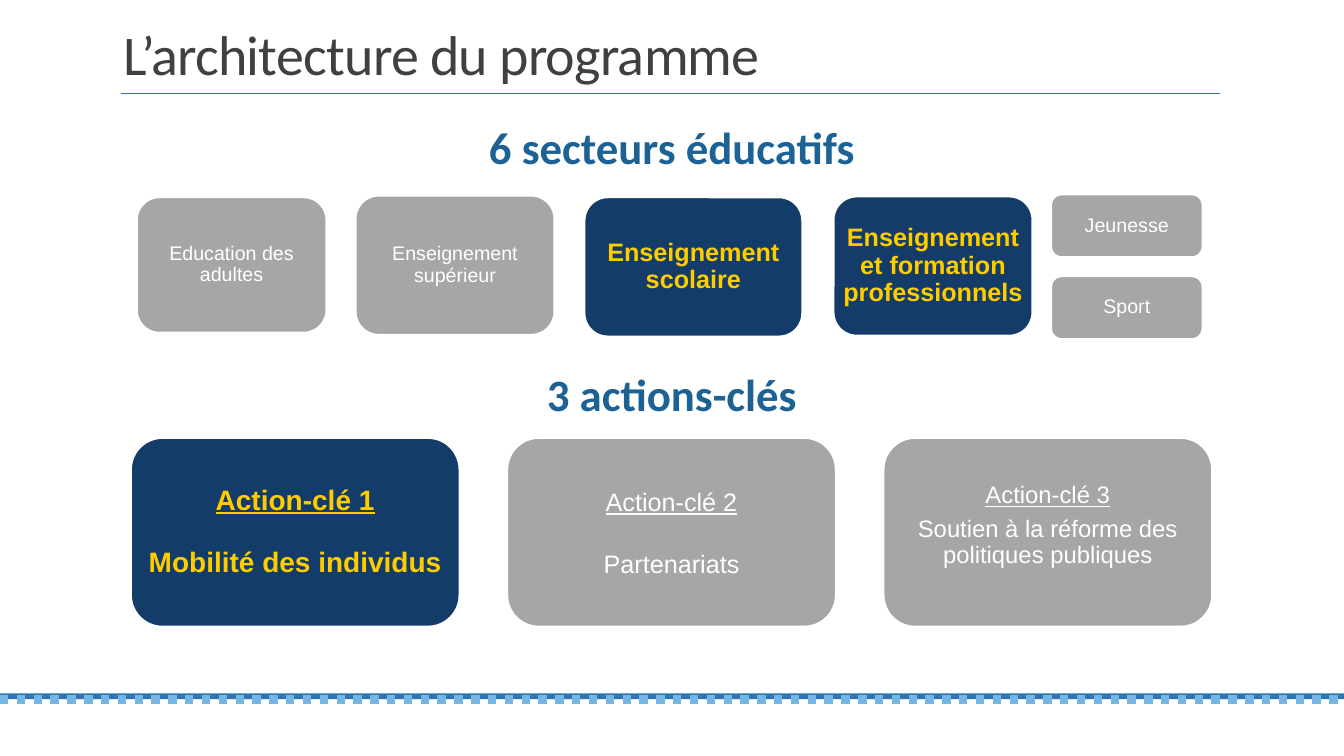
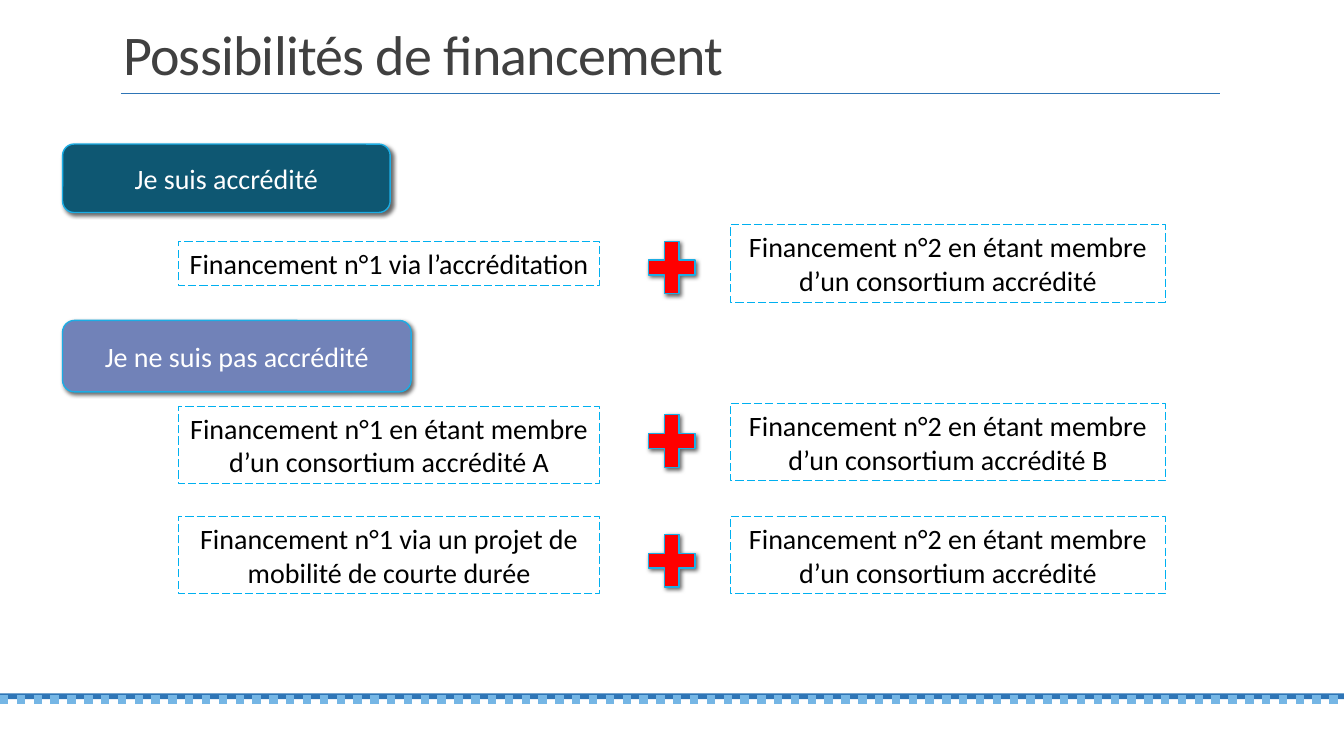
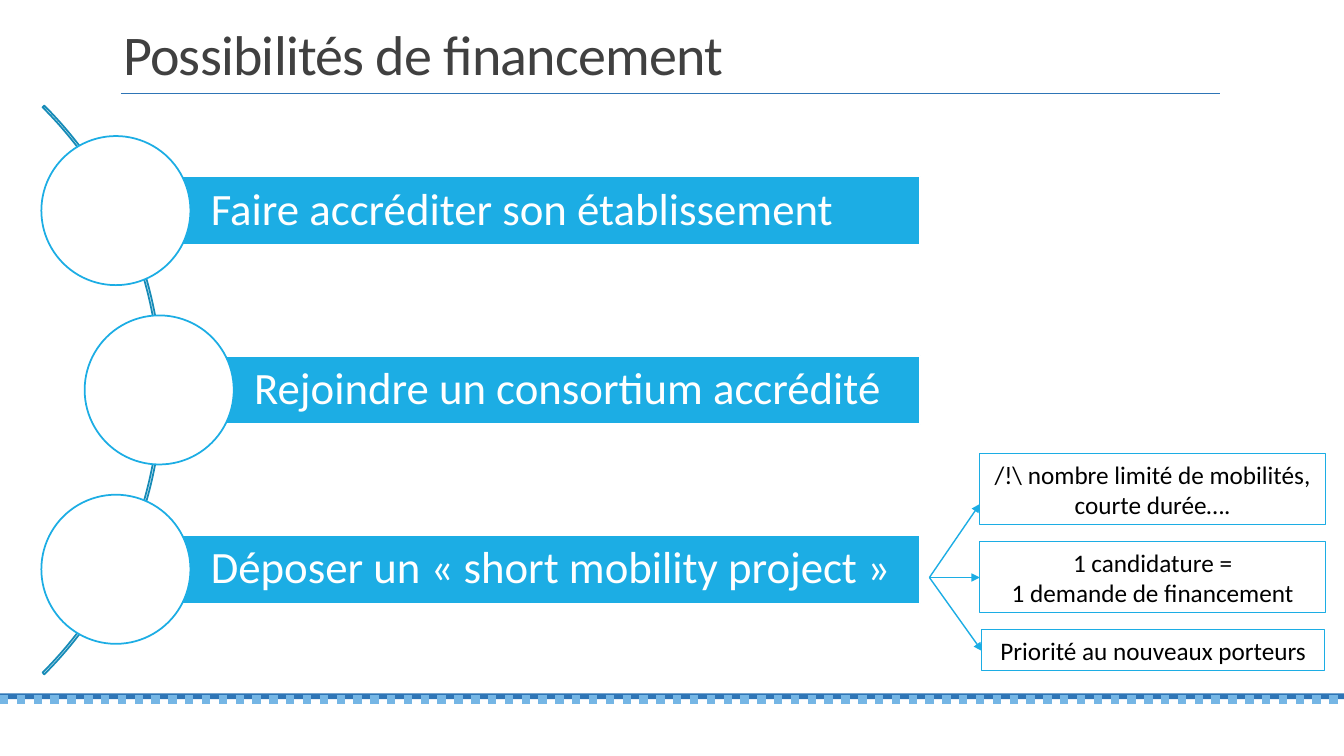
from lxml import etree
from pptx import Presentation
from pptx.dml.color import RGBColor
from pptx.enum.dml import MSO_LINE
from pptx.enum.shapes import MSO_CONNECTOR, MSO_SHAPE
from pptx.enum.text import MSO_ANCHOR, PP_ALIGN
from pptx.oxml.ns import qn
from pptx.util import Inches, Pt

RECTANGLE = MSO_SHAPE.RECTANGLE
ROUNDED = MSO_SHAPE.ROUNDED_RECTANGLE
PLUS = MSO_SHAPE.MATH_PLUS
OVAL = MSO_SHAPE.OVAL
ARC = MSO_SHAPE.BLOCK_ARC
STRAIGHT = MSO_CONNECTOR.STRAIGHT
LONG_DASH, DOTS = MSO_LINE.LONG_DASH, MSO_LINE.ROUND_DOT
LEFT, CENTER = PP_ALIGN.LEFT, PP_ALIGN.CENTER
TOP, MIDDLE, BOTTOM = MSO_ANCHOR.TOP, MSO_ANCHOR.MIDDLE, MSO_ANCHOR.BOTTOM

COLORS = {
    "white": "FFFFFF", "black": "000000", "title": "404040", "heading": "1D6294",
    "band": "2E75B6", "dots": "75B6E5", "navy": "143C68", "gray": "A6A6A6",
    "yellow": "FFCC00", "red": "FF0000", "teal": "0E5772", "lavender": "7182B8",
    "sky": "1CADE4", "dash": "00B0F0", "arc": "168BB7",
}
COLUMNS, ROWS = 32, 18
CELL = 5 / 12  # inches
MARGINS = (0.24, 0.12, 0.24, 0.12)
TIGHT = (0.05, 0.05, 0.05, 0.05)


def cells(count):
    return Inches(count * CELL)


def rgb(name):
    return RGBColor.from_string(COLORS[name])


class Deck:
    """Holds the shared style and the current slide; lengths are grid cells."""

    def __init__(self):
        self.presentation = Presentation()
        self.presentation.slide_width = cells(COLUMNS)
        self.presentation.slide_height = cells(ROWS)
        self.layout = self.presentation.slide_layouts[5]
        self.slide = None

    def new_slide(self, title):
        self.slide = self.presentation.slides.add_slide(self.layout)
        if len(self.presentation.slides) == 1:
            self.decorate_layout()
        placeholder = self.slide.shapes.title
        placeholder.left, placeholder.top = cells(2.69), 0
        placeholder.width, placeholder.height = cells(28.42), cells(2.18)
        self.set_text(placeholder, title, size=40, color="title", align=LEFT,
                      anchor=BOTTOM, spacing=0.85)
        for run in placeholder.text_frame.paragraphs[0].runs:
            run.font._element.set("spc", "-50")

    def decorate_layout(self):
        """Draw the title rule and the bottom band, then move them to the layout."""
        decorations = [
            self.line((2.88, 2.23), (29.04, 2.23), "band"),
            self.shape(RECTANGLE, (0, 16.51, COLUMNS, 0.14), fill="band"),
            self.line((0, 16.66), (COLUMNS, 16.66), "dots", width=6, dash=DOTS),
        ]
        for decoration in decorations:
            self.layout.shapes.element.append(decoration.element)

    def set_text(self, shape, text, size, color, font="Calibri", align=CENTER,
                 anchor=MIDDLE, spacing=1, gap=0, margins=MARGINS, bold=False,
                 underline_first=False):
        """Fill a shape with one paragraph per line, with gap points between."""
        frame = shape.text_frame
        left, top, right, bottom = map(cells, margins)
        settings = {"word_wrap": True, "vertical_anchor": anchor, "margin_left": left,
                    "margin_top": top, "margin_right": right, "margin_bottom": bottom}
        for name, value in settings.items():
            setattr(frame, name, value)
        for index, words in enumerate(text.split("\n")):
            paragraph = frame.add_paragraph() if index else frame.paragraphs[0]
            paragraph.alignment = align
            paragraph.line_spacing = spacing
            paragraph.space_before = Pt(gap if index else 0)
            run = paragraph.add_run()
            run.text = words
            run.font.color.rgb = rgb(color)
            formats = {"name": font, "size": Pt(size), "bold": bold,
                       "underline": underline_first and index == 0}
            for name, value in formats.items():
                setattr(run.font, name, value)

    def shape(self, kind, box, fill=None, line=None, width=1.25, dash=None,
              shadow=False, text=None, **text_format):
        shape = self.slide.shapes.add_shape(kind, *map(cells, box))
        shape.shadow.inherit = False
        if fill:
            shape.fill.solid()
            shape.fill.fore_color.rgb = rgb(fill)
        else:
            shape.fill.background()
        if line:
            shape.line.color.rgb = rgb(line)
            shape.line.width = Pt(width)
            if dash:
                shape.line.dash_style = dash
        else:
            shape.line.fill.background()
        if shadow:
            self.cast_shadow(shape)
        if text:
            self.set_text(shape, text, **text_format)
        return shape

    def cast_shadow(self, shape):
        effects = shape.element.spPr.find(qn("a:effectLst"))
        outer = etree.SubElement(effects, qn("a:outerShdw"), blurRad=str(Pt(3)),
                                 dist=str(Pt(2)), dir=str(45 * 60000))
        color = etree.SubElement(outer, qn("a:srgbClr"), val=COLORS["black"])
        etree.SubElement(color, qn("a:alpha"), val="60000")

    def line(self, start, end, color, width=1, dash=None, arrow=False):
        connector = self.slide.shapes.add_connector(STRAIGHT, *map(cells, start + end))
        connector.line.color.rgb = rgb(color)
        connector.line.width = Pt(width)
        if dash:
            connector.line.dash_style = dash
        properties = connector.element.spPr
        if arrow:
            etree.SubElement(properties.find(qn("a:ln")), qn("a:tailEnd"), type="triangle")
        etree.SubElement(properties, qn("a:effectLst"))
        return connector

    def heading(self, text, top):
        box = self.slide.shapes.add_textbox(*map(cells, (0, top, COLUMNS, 1.08)))
        self.set_text(box, text, size=32, color="heading", bold=True, spacing=0.9,
                      anchor=TOP)

    def card(self, box, text, size, highlighted, **text_format):
        """Rounded card: navy with bold yellow text if highlighted, else gray."""
        fill, color = ("navy", "yellow") if highlighted else ("gray", "white")
        text_format = {"margins": TIGHT, "spacing": 0.9, **text_format}
        self.shape(ROUNDED, box, fill, "white", text=text, size=size, color=color,
                   font="Arial", bold=highlighted, **text_format)

    def status(self, box, text, fill):
        self.shape(ROUNDED, box, fill, "sky", width=1, shadow=True,
                   text=text, size=20, color="white")

    def note(self, box, text, line, size, dash=None):
        self.shape(RECTANGLE, box, line=line, width=0.75, dash=dash,
                   text=text, size=size, color="black")

    def step(self, left, top, text):
        """Bar ending at a shared right edge, with a circle centred on its left edge."""
        right, height, diameter = 21.91, 1.63, 3.55
        self.shape(RECTANGLE, (left, top, right - left, height), "sky", "white",
                   text=text, size=32, color="white", align=LEFT, spacing=0.9,
                   margins=(2.26, 0.22, 0.22, 0.22))
        self.shape(OVAL, (left - diameter / 2, top + (height - diameter) / 2,
                          diameter, diameter), "white", "sky")


def architecture(deck):
    deck.new_slide("L’architecture du programme")
    deck.heading("6 secteurs éducatifs", 2.88)
    sectors = [
        ((3.26, 4.7, 4.51, 3.22), "Education des adultes", False),
        ((8.47, 4.66, 4.73, 3.31), "Enseignement supérieur", False),
        ((13.92, 4.7, 5.18, 3.31), "Enseignement scolaire", True),
        ((19.85, 4.68, 4.73, 3.31), "Enseignement et formation professionnels", True),
        ((25.03, 4.63, 3.6, 1.49), "Jeunesse", False),
        ((25.03, 6.58, 3.6, 1.49), "Sport", False),
    ]
    for box, text, highlighted in sectors:
        deck.card(box, text, 18 if highlighted else 14, highlighted)

    deck.heading("3 actions-clés", 8.76)
    actions = [
        ("Action-clé 1\nMobilité des individus", 20, {"gap": 23}),
        ("Action-clé 2\nPartenariats", 18, {"gap": 23, "spacing": 1}),
        ("Action-clé 3\nSoutien à la réforme des politiques publiques", 17,
         {"gap": 6, "margins": (0.05, 0.05, 0.05, 0.35)}),
    ]
    for index, (text, size, text_format) in enumerate(actions):
        deck.card((3.12 + 8.96 * index, 10.43, 7.82, 4.49), text, size,
                  highlighted=index == 0, underline_first=True, **text_format)


def funding_combinations(deck):
    deck.new_slide("Possibilités de financement")
    deck.status((1.49, 3.43, 7.8, 1.63), "Je suis accrédité", "teal")
    deck.status((1.49, 7.63, 8.3, 1.7), "Je ne suis pas accrédité", "lavender")
    member = "en étant membre d’un consortium accrédité"
    combinations = [
        (5.74, 1.06, "via l’accréditation", 5.52, 5.35, member),
        (9.67, 1.85, f"{member} A", 9.65, 9.6, f"{member} B"),
        (12.29, 1.85, "via un projet de mobilité de courte durée", 12.5, 12.29, member),
    ]
    for first_top, first_height, first, plus_top, second_top, second in combinations:
        deck.note((4.25, first_top, 10.03, first_height), f"Financement n°1 {first}",
                  "dash", 20, LONG_DASH)
        deck.shape(PLUS, (15.24, plus_top, 1.51, 1.7), "red", "sky", width=1, shadow=True)
        deck.note((17.4, second_top, 10.34, 1.85), f"Financement n°2 {second}",
                  "dash", 20, LONG_DASH)


def funding_steps(deck):
    deck.new_slide("Possibilités de financement")
    arc = deck.shape(ARC, (-15.29, -0.29, 19.15, 19.15), line="arc")
    for index, value in enumerate((189, 27, 0.003)):
        arc.adjustments[index] = value
    steps = [
        (2.76, "Faire accréditer son établissement"),
        (3.79, "Rejoindre un consortium accrédité"),
        (2.76, "Déposer un « short mobility project »"),
    ]
    for index, (left, text) in enumerate(steps):
        deck.step(left, 4.2 + 4.27 * index, text)

    notes = [
        ((23.33, 10.8, 8.23, 1.7), r"/!\ nombre limité de mobilités, courte durée….", 12),
        ((23.33, 12.89, 8.23, 1.7), "1 candidature =\n1 demande de financement", 13.75),
        ((23.38, 15, 8.16, 0.96), "Priorité au nouveaux porteurs", 15.5),
    ]
    for box, text, arrow_end in notes:
        deck.note(box, text, "sky", 18)
        deck.line((22.13, 13.75), (box[0], arrow_end), "sky", arrow=True)


def main():
    deck = Deck()
    architecture(deck)
    funding_combinations(deck)
    funding_steps(deck)
    deck.presentation.save("out.pptx")


if __name__ == "__main__":
    main()
